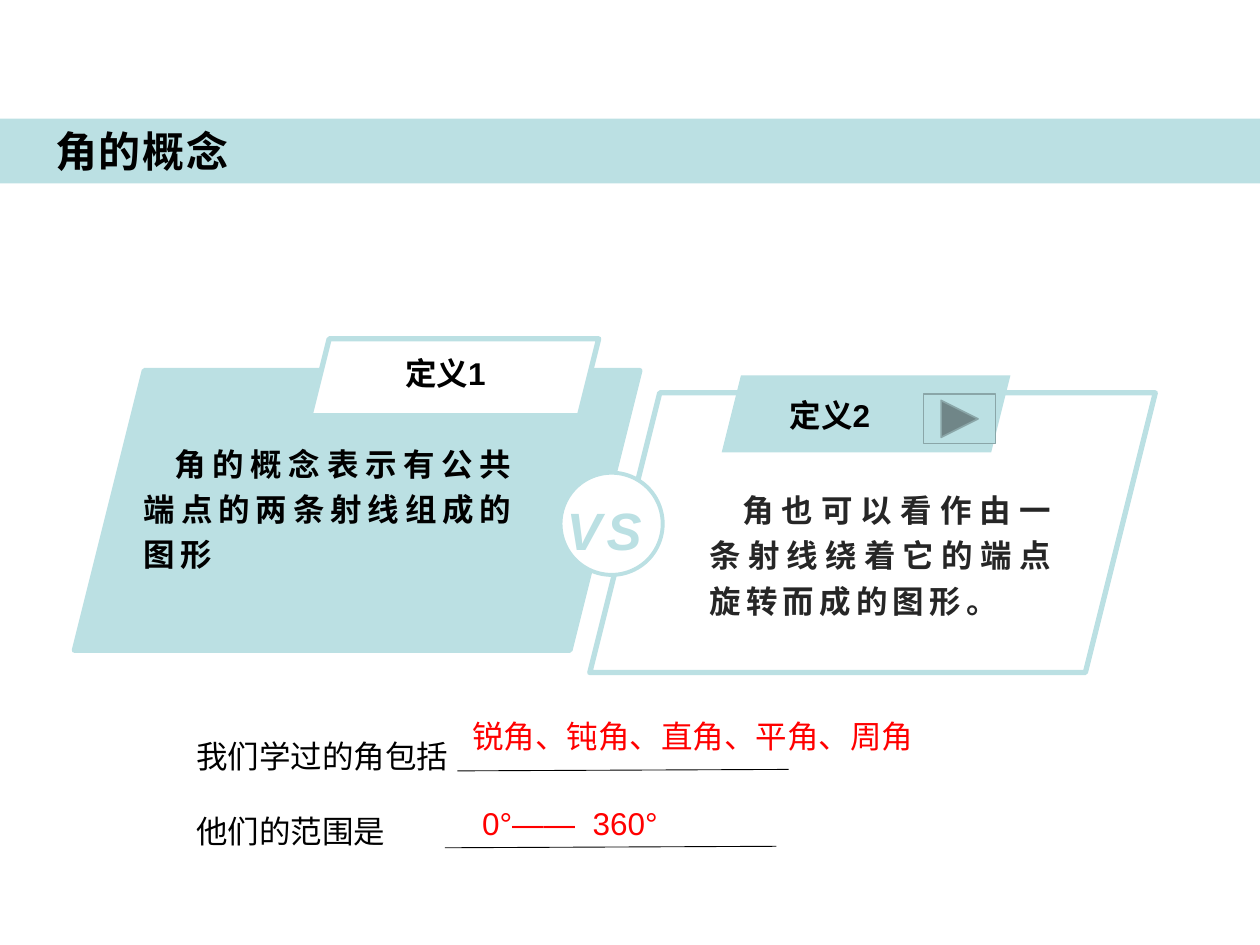
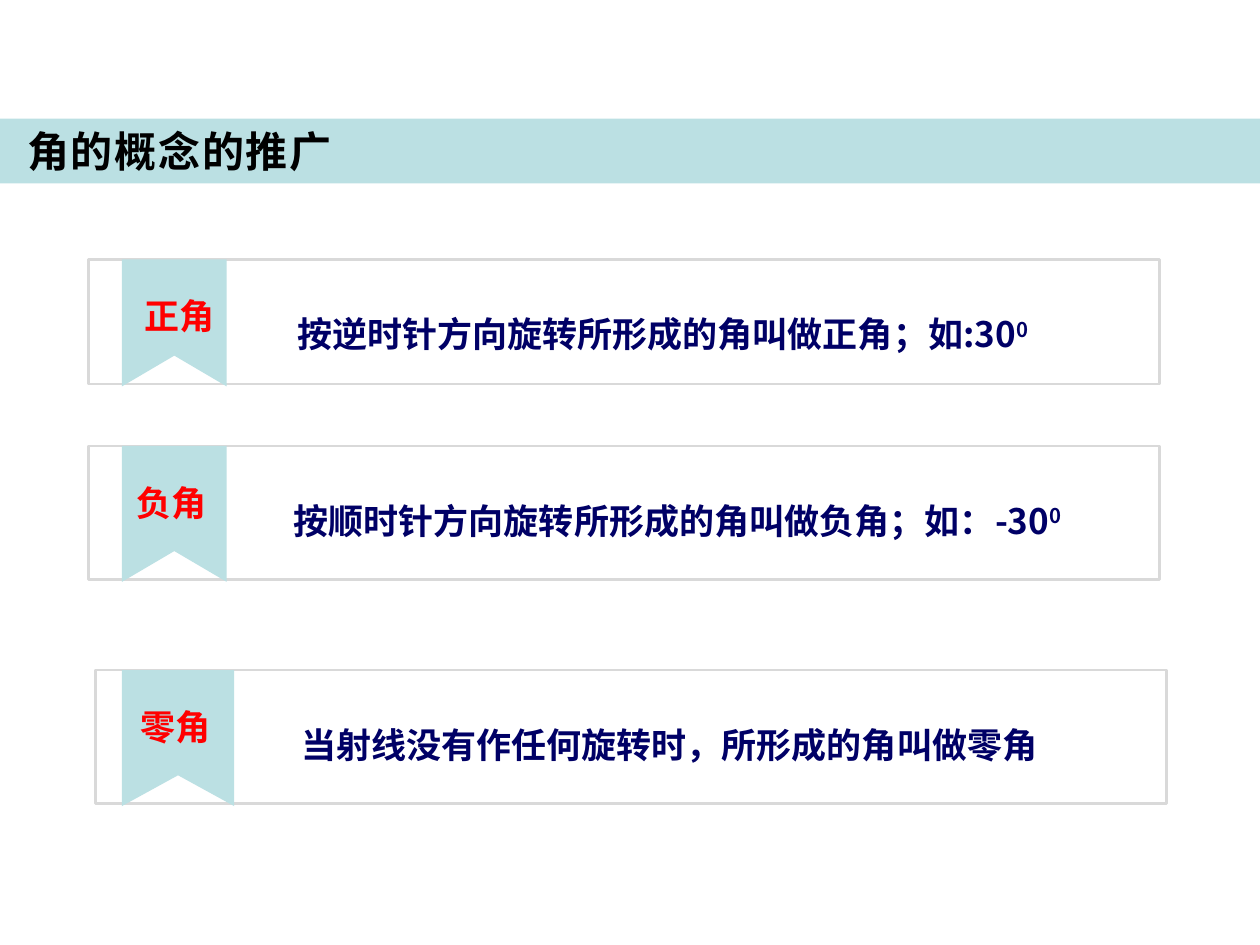
from lxml import etree
from pptx import Presentation
from pptx.dml.color import RGBColor as Rgb
from pptx.enum.shapes import MSO_CONNECTOR as Conn, MSO_SHAPE as Geo
from pptx.enum.text import MSO_ANCHOR as Anchor, MSO_AUTO_SIZE as Fit, PP_ALIGN as Align
from pptx.oxml.ns import qn
from pptx.util import Cm, Pt

HUES = {
    "band": "BBE0E3",
    "paper": "FFFFFF",
    "ink": "000000",
    "soft": "262626",
    "navy": "000066",
    "red": "FF0000",
    "edge": "D9D9D9",
    "rim": "8AA6A8",
}
SANS = "Noto Sans CJK SC"
LATIN = "Arial"


def hue(name):
    return Rgb.from_string(HUES[name])


def style(run, size=18, color="ink", font=SANS, bold=False, italic=False,
          track=0, base=0):
    """Format a run; track is letter spacing in points, base a raise in percent."""
    face = run.font
    face.size, face.bold, face.italic, face.name = Pt(size), bold, italic, font
    face.color.rgb = hue(color)
    props = run._r.get_or_add_rPr()
    etree.SubElement(props, qn("a:ea")).set("typeface", SANS)
    if track:
        props.set("spc", str(track * 100))
    if base:
        props.set("baseline", str(base * 1000))


def write(frame, text, align=Align.LEFT, lead=1.0, gap=0, indent=0, pad=True,
          **look):
    """Fill a frame; text is a list of paragraphs, each a string or (string, look) runs."""
    frame.word_wrap, frame.auto_size = True, Fit.NONE
    frame.vertical_anchor = Anchor.TOP
    across, down = (Cm(0.25), Cm(0.13)) if pad else (0, 0)
    frame.margin_left = frame.margin_right = across
    frame.margin_top = frame.margin_bottom = down
    for num, line in enumerate([text] if isinstance(text, str) else text):
        para = frame.add_paragraph() if num else frame.paragraphs[0]
        para.alignment, para.line_spacing = align, lead
        if num and gap:
            para.space_before = Pt(gap)
        if indent:
            para._p.get_or_add_pPr().set("indent", str(Cm(indent)))
        for part, extra in [(line, {})] if isinstance(line, str) else line:
            run = para.add_run()
            run.text = part
            style(run, **{**look, **extra})


def label(slide, text, x, y, w, h, **look):
    box = slide.shapes.add_textbox(Cm(x), Cm(y), Cm(w), Cm(h))
    write(box.text_frame, text, **look)


def paint(shape, fill=None, line=None, width=1.0):
    shape.shadow.inherit = False
    if fill:
        shape.fill.solid()
        shape.fill.fore_color.rgb = hue(fill)
    else:
        shape.fill.background()
    if line:
        shape.line.color.rgb = hue(line)
        shape.line.width = Pt(width)
    else:
        shape.line.fill.background()


def form(slide, geo, x, y, w, h, **look):
    shape = slide.shapes.add_shape(geo, Cm(x), Cm(y), Cm(w), Cm(h))
    paint(shape, **look)
    return shape


def rule(slide, x, y):
    """Draw a slightly rising blank line for an answer."""
    line = slide.shapes.add_connector(
        Conn.STRAIGHT, Cm(x), Cm(y), Cm(x + 6.68), Cm(y - 0.03))
    line.line.color.rgb = hue("ink")
    line.line.width = Pt(0.5)
    etree.SubElement(line._element.spPr, qn("a:effectLst"))


def ribbon(slide, x, y, w, h, notch=0.62):
    mid, low = x + w / 2, y + h
    spots = [(x + w, y), (x + w, low), (mid, low - notch), (x, low)]
    pen = slide.shapes.build_freeform(Cm(x), Cm(y))
    pen.add_line_segments([(Cm(a), Cm(b)) for a, b in spots])
    paint(pen.convert_to_shape(), fill="band")


def page(deck, text, x):
    """Add a slide with the shared band behind its title."""
    slide = deck.slides.add_slide(deck.slide_layouts[5])
    band = form(slide, Geo.RECTANGLE, 0, 2.39, 25.4, 1.31, fill="band")
    slide.shapes._spTree.insert(2, band._element)
    title = slide.shapes.title
    title.left, title.top, title.width, title.height = (
        Cm(x), Cm(2.4), Cm(20.32), Cm(1.28))
    write(title.text_frame, text, size=24, bold=True, track=1)
    return slide


def compare(deck):
    slide = page(deck, "角的概念", 0.86)
    slant = Geo.PARALLELOGRAM
    big, tab = (11.4, 5.64), (5.82, 1.55)
    edge = {"line": "band", "width": 3}
    form(slide, slant, 1.5, 7.47, *big, fill="band", **edge)
    form(slide, slant, 6.25, 6.83, *tab, fill="paper", **edge)
    form(slide, slant, 11.89, 7.92, *big, **edge)
    body = {"align": Align.JUSTIFY, "lead": 1.2, "pad": False, "bold": True,
            "track": 3}
    label(slide, "角的概念表示有公共端点的两条射线组成的图形",
          2.9, 8.81, 7.52, 2.77, indent=0.61, **body)
    label(slide, "角也可以看作由一条射线绕着它的端点旋转而成的图形。",
          14.3, 9.75, 6.99, 2.77, indent=0.66, color="soft", **body)
    form(slide, slant, 14.55, 7.57, *tab, fill="band")
    form(slide, Geo.OVAL, 11.3, 9.53, 2.06, 2.06,
         fill="paper", line="band", width=2.25)
    label(slide, "VS", 11.1, 9.78, 2.16, 1.55, align=Align.CENTER, lead=1.2,
          pad=False, size=30, color="band", font=LATIN, bold=True,
          italic=True, track=3)
    for text, x, y in [("定义1", 7.92, 7.01), ("定义2", 15.67, 7.85)]:
        label(slide, text, x, y, 3.6, 1.02, font=LATIN, bold=True)
    form(slide, Geo.ACTION_BUTTON_FORWARD_OR_NEXT, 18.62, 7.95, 1.45, 0.99,
         fill="band", line="rim")

    label(slide, ["我们学过的角包括", "他们的范围是"],
          3.71, 14.73, 14.68, 2.95, gap=21, font=LATIN)
    rule(slide, 9.22, 15.54)
    rule(slide, 8.97, 17.09)
    span = [("0°——", {}), (" ", {"track": 5}), ("360°", {})]
    for text, x, y in [("锐角、钝角、直角、平角、周角", 9.27, 14.33),
                       ([span], 9.47, 16.08)]:
        label(slide, text, x, y, 9.75, 1.02, font=LATIN, color="red")


def card(slide, name, text, x, y, h, flag, name_x, text_x):
    """Draw one framed kind of angle with its named ribbon of width flag."""
    form(slide, Geo.RECTANGLE, x, y, 21.59, h, line="edge", width=1.5)
    ribbon(slide, 2.46, y, flag, h + 0.05)
    look = {"size": 20, "bold": True}
    label(slide, [text], text_x, y + 0.91, 16.03, 1.02, align=Align.JUSTIFY,
          lead=1.2, pad=False, color="navy", **look)
    label(slide, name, name_x, y + 0.58, 2.44, 1.12, color="red", **look)


def extend(deck):
    slide = page(deck, "角的概念的推广", 0.3)
    power = ("0", {"base": 30})
    kinds = [
        ("正角", [("按逆时针方向旋转所形成的角叫做正角；如:30", {}), power],
         1.78, 5.23, 2.51, 2.11, 2.67, 5.99),
        ("负角", [("按顺时针方向旋转所形成的角叫做负角；如：-30", {}), power],
         1.78, 8.99, 2.69, 2.11, 2.51, 5.92),
        ("零角", "当射线没有作任何旋转时，所形成的角叫做零角",
         1.93, 13.51, 2.69, 2.26, 2.59, 6.07),
    ]
    for kind in kinds:
        card(slide, *kind)


def main():
    deck = Presentation()
    deck.slide_width, deck.slide_height = Cm(25.4), Cm(19.05)
    compare(deck)
    extend(deck)
    deck.save("out.pptx")


if __name__ == "__main__":
    main()
